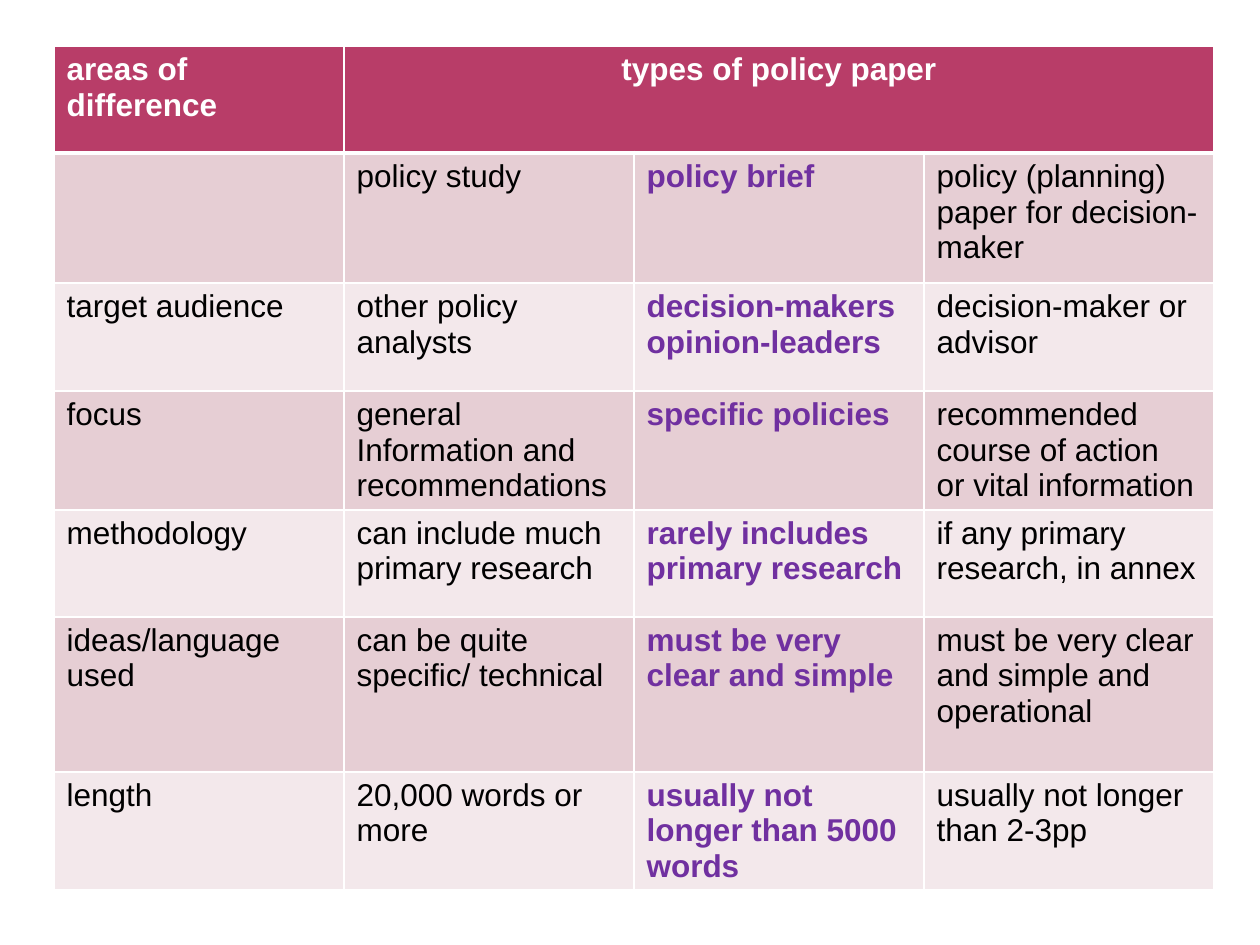
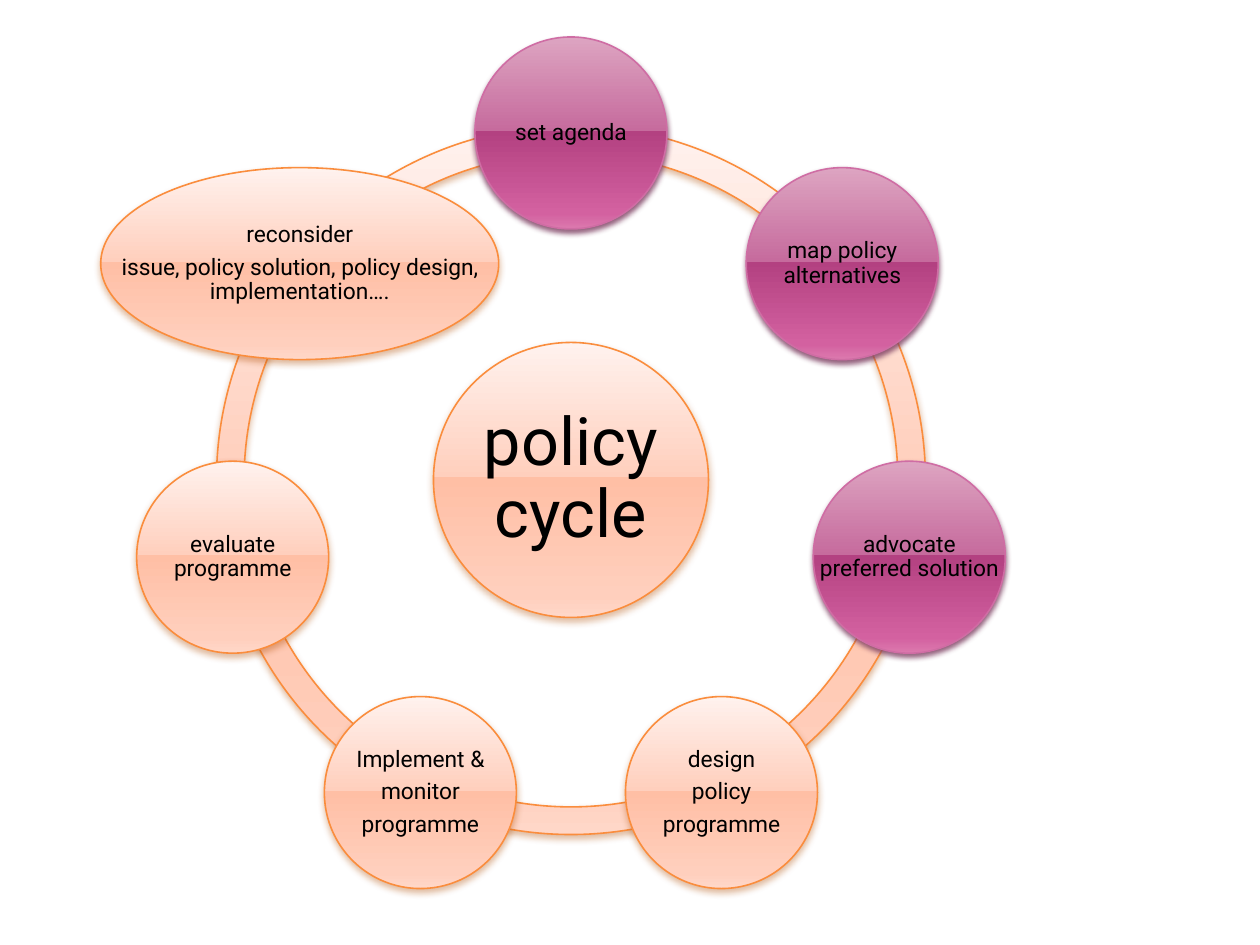
import math

from lxml import etree
from pptx import Presentation
from pptx import util as u
from pptx.dml.color import RGBColor
from pptx.enum import shapes, text
from pptx.oxml.ns import qn

# Content
HEADER = ["areas of difference", "types of policy paper", "", ""]
ROWS = [
    ["", "policy study", "policy brief", "policy (planning) paper for decision-maker"],
    ["target audience", "other policy analysts", "decision-makers\nopinion-leaders",
     "decision-maker or advisor"],
    ["focus", "general Information and recommendations", "specific policies",
     "recommended course of action\nor vital information"],
    ["methodology", "can include much primary research",
     "rarely includes primary research", "if any primary research, in annex"],
    ["ideas/language used", "can be quite specific/ technical",
     "must be very clear and simple", "must be very clear and simple and operational"],
    ["length", "20,000 words or more", "usually not longer than 5000 words",
     "usually not longer than 2-3pp"],
]
CYCLE_NAME = "policy cycle"
# Clockwise from the top: text, look, width in px
STAGES = [
    ("set agenda", "pink", 192),
    ("map policy alternatives", "pink", 192),
    ("advocate preferred solution", "pink", 192),
    ("design\npolicy\nprogramme", "peach", 192),
    ("Implement &\nmonitor\nprogramme", "peach", 192),
    ("evaluate programme", "peach", 192),
    ("reconsider\nissue, policy solution, policy design, implementation….", "peach", 398),
]

# Shared look
COLOURS = {"white": "FFFFFF", "black": "000000", "header": "B83D68",
           "band_dark": "E6CED4", "band_light": "F3E8EB", "brief": "7030A0"}
STOP_PLACES = (0, 49, 49, 92, 100)
LOOKS = {
    "peach": {"stops": ("FFF2EE", "FFCFBD", "FFBFA5", "FFCFBD", "FFD7C8"),
              "line": "FA8D3D", "shadow": "B04F08", "alpha": 38, "blur": 4},
    "pink": {"stops": ("DDA4C1", "C66B9D", "B34181", "D361A0", "DC79AE"),
             "line": "CF6DA4", "shadow": "804365", "alpha": 83, "blur": 3.1},
}
TABLE_FONT, CYCLE_FONT = "Arial", "Roboto"

# Geometry in px, 126 to the inch
PX = u.Inches(1) / 126
TABLE_LEFT, TABLE_TOP, COLUMN_WIDTH = 54, 46, 290
ROW_HEIGHTS = [107, 130, 108, 119, 107, 155, 118]
CENTRE_X, CENTRE_Y = 571, 480
RING_SIZE, RING_RADIUS = 709, 347
STAGE_HEIGHT, HUB_SIZE = 192, 275


def px(*lengths):
    return [u.Emu(round(length * PX)) for length in lengths]


def centred(x, y, width, height):
    return px(x - width / 2, y - height / 2, width, height)


def rgb(value):
    return RGBColor.from_string(value)


def add_colour(parent, value, alpha=None):
    colour = etree.SubElement(parent, qn("a:srgbClr"), val=value)
    if alpha is not None:
        etree.SubElement(colour, qn("a:alpha"), val=str(alpha * 1000))


def format_paragraphs(frame, colour, font, **paragraph_format):
    for paragraph in frame.paragraphs:
        for name, value in paragraph_format.items():
            setattr(paragraph, name, value)
        for name, value in font.items():
            setattr(paragraph.font, name, value)
        paragraph.font.color.rgb = rgb(colour)


# Table of differences
def format_cell(cell, words, fill, colour, bold, alignment, top, bottom):
    properties = cell._tc.get_or_add_tcPr()
    for side, points in {"L": 1, "R": 1, "T": top, "B": bottom}.items():
        line = etree.SubElement(properties, qn("a:ln" + side), w=str(u.Pt(points)))
        add_colour(etree.SubElement(line, qn("a:solidFill")), COLOURS["white"])
    cell.fill.solid()
    cell.fill.fore_color.rgb = rgb(COLOURS[fill])
    cell.text_frame.text = words
    font = {"name": TABLE_FONT, "size": u.Pt(18), "bold": bold}
    format_paragraphs(cell.text_frame, COLOURS[colour], font, alignment=alignment)


def build_differences(slide):
    rows = [HEADER] + ROWS
    place = px(TABLE_LEFT, TABLE_TOP, COLUMN_WIDTH * len(HEADER), sum(ROW_HEIGHTS))
    table = slide.shapes.add_table(len(rows), len(HEADER), *place).table
    table.first_row = table.horz_banding = False
    for column in table.columns:
        column.width = px(COLUMN_WIDTH)[0]
    for row, height in zip(table.rows, px(*ROW_HEIGHTS)):
        row.height = height
    for r, row in enumerate(rows):
        for c, words in enumerate(row):
            is_header, is_brief = r == 0, c == 2
            fill = "header" if is_header else ("band_light", "band_dark")[r % 2]
            colour = "white" if is_header else "brief" if is_brief else "black"
            alignment = text.PP_ALIGN.CENTER if is_header and c else text.PP_ALIGN.LEFT
            format_cell(table.cell(r, c), words, fill, colour, is_header or is_brief,
                        alignment, top=3 if r == 1 else 1, bottom=3 if is_header else 1)
    table.cell(0, 1).merge(table.cell(0, len(HEADER) - 1))


# Policy cycle
def add_glossy(slide, kind, place, look):
    shape = slide.shapes.add_shape(kind, *place)
    shape.fill.gradient()
    shape.fill.gradient_angle = 270
    properties = shape._element.spPr
    stops = properties.find(".//" + qn("a:gsLst"))
    for stop in list(stops):
        stops.remove(stop)
    for position, colour in zip(STOP_PLACES, look["stops"]):
        add_colour(etree.SubElement(stops, qn("a:gs"), pos=str(position * 1000)), colour)
    shape.line.color.rgb = rgb(look["line"])
    shape.line.width = u.Pt(0.9)
    shape.shadow.inherit = False
    shadow = etree.SubElement(properties.find(qn("a:effectLst")), qn("a:outerShdw"),
                              blurRad=str(u.Pt(look["blur"])), dist=str(u.Pt(2)),
                              dir="5400000", rotWithShape="0")
    add_colour(shadow, look["shadow"], look["alpha"])
    return shape


def add_disc(slide, words, place, look, size, inset):
    add_glossy(slide, shapes.MSO_SHAPE.OVAL, place, look)
    frame = slide.shapes.add_textbox(*place).text_frame
    frame.word_wrap = True
    frame.vertical_anchor = text.MSO_ANCHOR.MIDDLE
    for side in ("left", "top", "right", "bottom"):
        setattr(frame, "margin_" + side, px(inset)[0])
    frame.text = words
    format_paragraphs(frame, COLOURS["black"], {"name": CYCLE_FONT, "size": u.Pt(size)},
                      alignment=text.PP_ALIGN.CENTER, line_spacing=0.9,
                      space_after=u.Pt(size * 0.35))


def build_cycle(slide):
    step = 360 / len(STAGES)
    angles = [(270 + step * i) % 360 for i in range(len(STAGES))]
    ring = centred(CENTRE_X, CENTRE_Y, RING_SIZE, RING_SIZE)
    # One arc from each stage to the next
    for start in reversed(angles):
        arc = add_glossy(slide, shapes.MSO_SHAPE.BLOCK_ARC, ring, LOOKS["peach"])
        # Angles are stored in 60000ths of a degree, adjustments in 100000ths
        for i, value in enumerate((start * 0.6, (start + step) % 360 * 0.6, 0.039)):
            arc.adjustments[i] = value
    hub = centred(CENTRE_X, CENTRE_Y, HUB_SIZE, HUB_SIZE)
    add_disc(slide, CYCLE_NAME, hub, LOOKS["peach"], size=38, inset=6)
    for (words, look, width), angle in zip(STAGES, angles):
        x = CENTRE_X + RING_RADIUS * math.cos(math.radians(angle))
        y = CENTRE_Y + RING_RADIUS * math.sin(math.radians(angle))
        place = centred(x, y, width, STAGE_HEIGHT)
        add_disc(slide, words, place, LOOKS[look], size=13, inset=2)


def main():
    presentation = Presentation()
    presentation.slide_width, presentation.slide_height = u.Inches(10), u.Inches(7.5)
    blank = presentation.slide_layouts[6]
    for build in (build_differences, build_cycle):
        build(presentation.slides.add_slide(blank))
    presentation.save("out.pptx")


if __name__ == "__main__":
    main()
